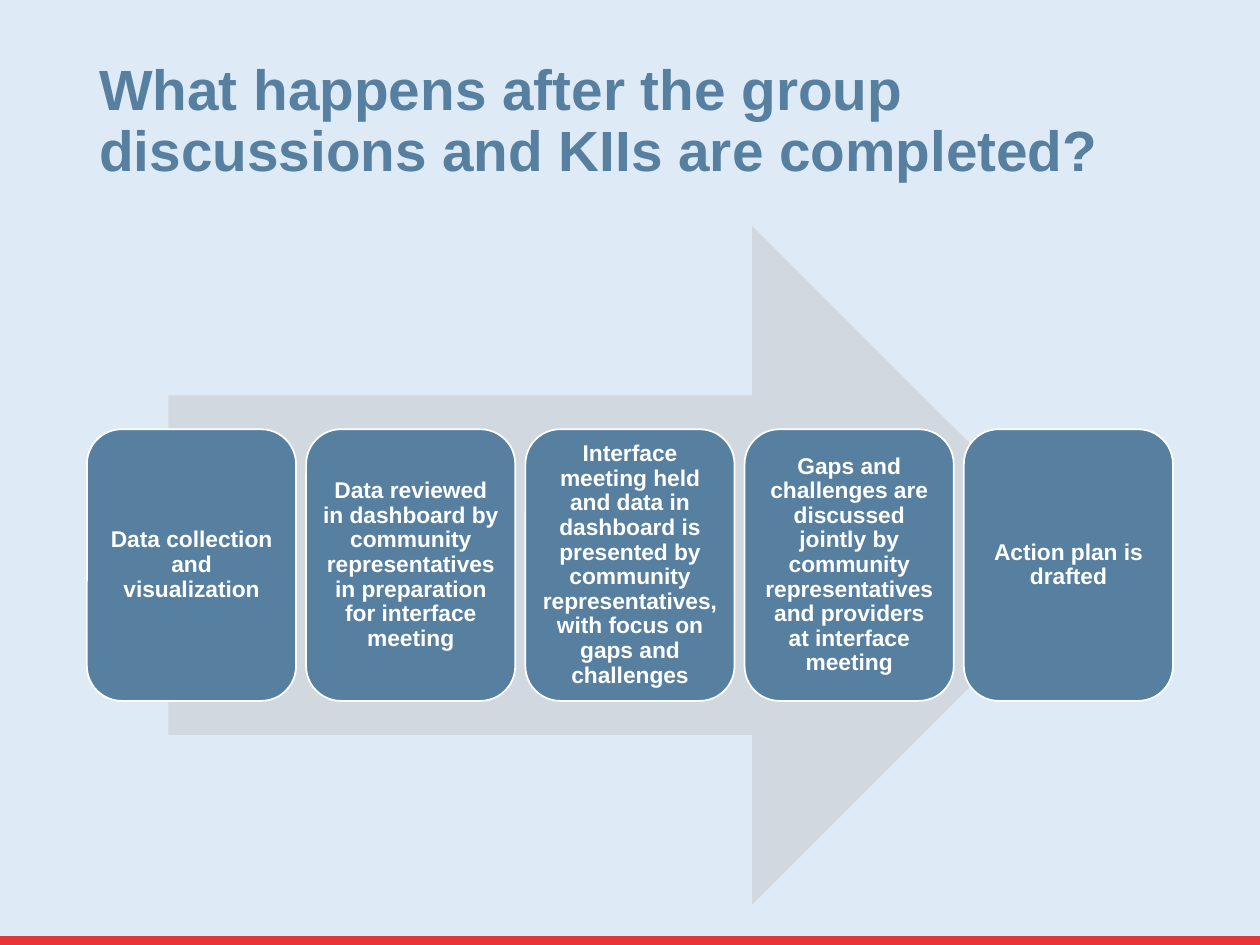
from dataclasses import dataclass

from pptx import Presentation
from pptx.dml.color import RGBColor
from pptx.enum.shapes import MSO_SHAPE
from pptx.enum.text import MSO_ANCHOR, PP_ALIGN
from pptx.util import Inches, Pt


@dataclass(frozen=True)
class Theme:
    font: str = "Arial"
    background: str = "DEEBF7"
    accent: str = "577F9F"
    arrow: str = "D1D8DF"
    stripe: str = "E73439"
    white: str = "FFFFFF"
    title_size: float = 32.4
    step_size: float = 13


THEME = Theme()
TITLE = "What happens after the group discussions and KIIs are completed?"
STEPS = [
    "Data collection and visualization",
    "Data reviewed in dashboard by community representatives in preparation for interface meeting",
    "Interface meeting held and data in dashboard is presented by community representatives, "
    "with focus on gaps and challenges",
    "Gaps and challenges are discussed jointly by community representatives and providers "
    "at interface meeting",
    "Action plan is drafted",
]


def add_block(s, kind, left, top, width, height, fill, line=None):
    sp = s.shapes.add_shape(kind, Inches(left), Inches(top), Inches(width), Inches(height))
    sp.shadow.inherit = False
    sp.fill.solid()
    sp.fill.fore_color.rgb = RGBColor.from_string(fill)
    if line:
        sp.line.color.rgb = RGBColor.from_string(line)
        sp.line.width = Pt(1)
    else:
        sp.line.fill.background()
    return sp


def set_text(sp, text, size, color, align, anchor):
    tf = sp.text_frame
    tf.word_wrap = True
    tf.vertical_anchor = anchor
    tf.text = text
    p = tf.paragraphs[0]
    p.alignment = align
    p.line_spacing = 0.9
    r = p.runs[0]
    r.font.name = THEME.font
    r.font.size = Pt(size)
    r.font.bold = True
    r.font.color.rgb = RGBColor.from_string(color)
    return tf


def add_backdrop(s, width, height):
    bg = s.background.fill
    bg.solid()
    bg.fore_color.rgb = RGBColor.from_string(THEME.background)
    stripe = 0.07
    add_block(s, MSO_SHAPE.RECTANGLE, 0, height - stripe, width, stripe, THEME.stripe)


def add_title(s, left, top, width, height):
    sp = s.shapes.add_textbox(Inches(left), Inches(top), Inches(width), Inches(height))
    set_text(sp, TITLE, THEME.title_size, THEME.accent, PP_ALIGN.LEFT, MSO_ANCHOR.BOTTOM)


def add_process(s, left, top, width, height):
    arrow_width = width * 0.85
    add_block(s, MSO_SHAPE.RIGHT_ARROW, left + (width - arrow_width) / 2, top,
              arrow_width, height, THEME.arrow)
    gap = 0.08
    step_width = (width - gap * (len(STEPS) - 1)) / len(STEPS)
    step_height = height * 0.4
    step_top = top + (height - step_height) / 2
    for i, text in enumerate(STEPS):
        sp = add_block(s, MSO_SHAPE.ROUNDED_RECTANGLE, left + i * (step_width + gap),
                       step_top, step_width, step_height, THEME.accent, THEME.white)
        tf = set_text(sp, text, THEME.step_size, THEME.white,
                      PP_ALIGN.CENTER, MSO_ANCHOR.MIDDLE)
        tf.margin_left = tf.margin_right = Inches(0.05)
        tf.margin_top = tf.margin_bottom = Inches(0.05)


def main():
    prs = Presentation()
    prs.slide_width, prs.slide_height = Inches(10), Inches(7.5)
    s = prs.slides.add_slide(prs.slide_layouts[6])
    add_backdrop(s, 10, 7.5)
    add_title(s, 0.69, 0.64, 8.62, 0.87)
    add_process(s, 0.69, 1.79, 8.62, 5.39)
    prs.save("out.pptx")


if __name__ == "__main__":
    main()
